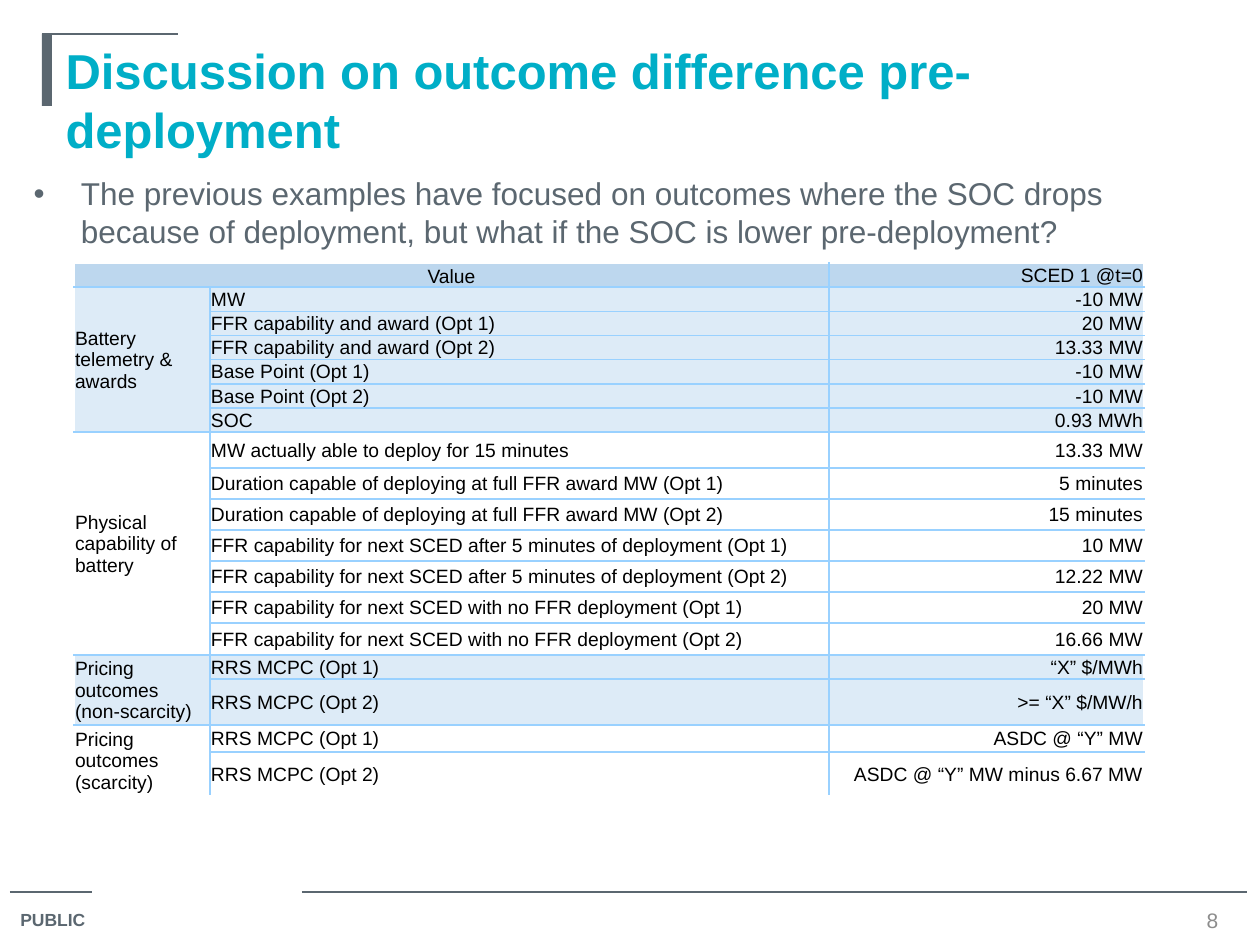
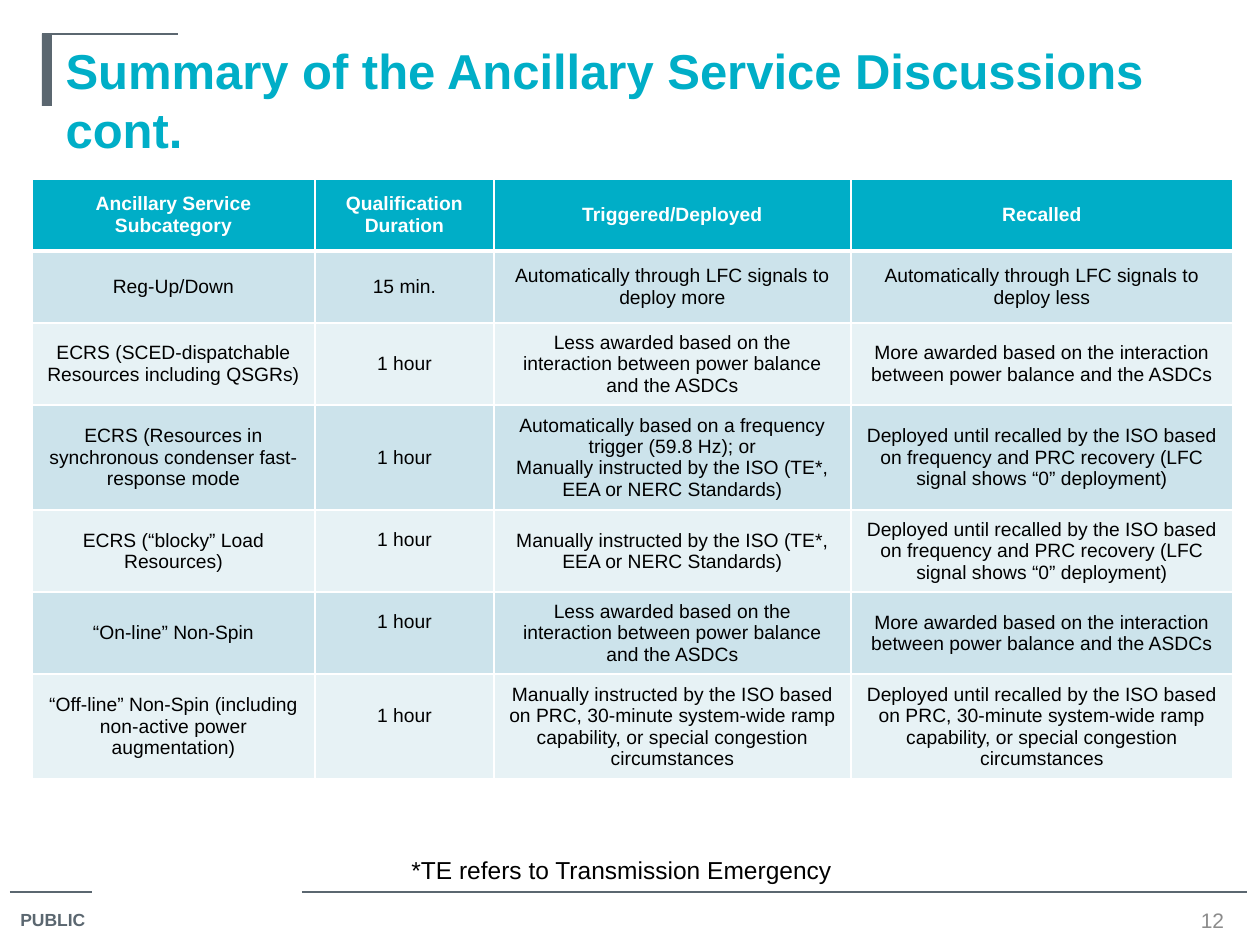
from lxml import etree
from pptx import Presentation
from pptx.dml.color import RGBColor
from pptx.enum.shapes import MSO_CONNECTOR, MSO_SHAPE
from pptx.enum.text import MSO_ANCHOR, MSO_AUTO_SIZE, PP_ALIGN
from pptx.oxml.ns import qn
from pptx.util import Pt

LEFT, CENTER, RIGHT = PP_ALIGN.LEFT, PP_ALIGN.CENTER, PP_ALIGN.RIGHT
TOP, MIDDLE, BOTTOM = MSO_ANCHOR.TOP, MSO_ANCHOR.MIDDLE, MSO_ANCHOR.BOTTOM
NO_AUTOSIZE = MSO_AUTO_SIZE.NONE
STRAIGHT, RECTANGLE = MSO_CONNECTOR.STRAIGHT, MSO_SHAPE.RECTANGLE

FONT = "Arial"
TEAL = RGBColor(0x00, 0xAE, 0xC7)
SLATE = RGBColor(0x5B, 0x67, 0x70)
GRAY = RGBColor(0x8C, 0x8C, 0x8C)
BLACK = RGBColor(0x00, 0x00, 0x00)
WHITE = RGBColor(0xFF, 0xFF, 0xFF)
SKY_LINE = RGBColor(0x99, 0xD1, 0xFF)
SKY_HEADER = RGBColor(0xBD, 0xD7, 0xEE)
SKY_BAND = RGBColor(0xDD, 0xEB, 0xF7)
TEAL_BANDS = (RGBColor(0xCC, 0xE3, 0xEB), RGBColor(0xE7, 0xF2, 0xF5))

PAGE_WIDTH, PAGE_HEIGHT = 1260, 945
TITLE_BOX = (53, 34, 1166, 72)
BODY_BOX = (21, 168, 1176, 581)
BATTERY_BOX = (74, 263, 1070, 513)
SERVICE_BOX = (32, 179, 1201, 504)
NOTE_BOX = (399, 849, 536, 43)

# Each group: label, shaded, row heights, (measure, value) rows
BATTERY_GROUPS = [
    ("Battery telemetry & awards", True, [23, 23, 22, 23, 23, 22], [
        ("MW", "-10 MW"),
        ("FFR capability and award (Opt 1)", "20 MW"),
        ("FFR capability and award (Opt 2)", "13.33 MW"),
        ("Base Point (Opt 1)", "-10 MW"),
        ("Base Point (Opt 2)", "-10 MW"),
        ("SOC", "0.93 MWh")]),
    ("Physical capability of battery", False, [36] + [31] * 5 + [32], [
        ("MW actually able to deploy for 15 minutes", "13.33 MW"),
        ("Duration capable of deploying at full FFR award MW (Opt 1)", "5 minutes"),
        ("Duration capable of deploying at full FFR award MW (Opt 2)", "15 minutes"),
        ("FFR capability for next SCED after 5 minutes of deployment (Opt 1)", "10 MW"),
        ("FFR capability for next SCED after 5 minutes of deployment (Opt 2)", "12.22 MW"),
        ("FFR capability for next SCED with no FFR deployment (Opt 1)", "20 MW"),
        ("FFR capability for next SCED with no FFR deployment (Opt 2)", "16.66 MW")]),
    ("Pricing outcomes (non-scarcity)", True, [23, 43], [
        ("RRS MCPC (Opt 1)", "“X” $/MWh"),
        ("RRS MCPC (Opt 2)", ">= “X” $/MW/h")]),
    ("Pricing outcomes (scarcity)", False, [27, 39], [
        ("RRS MCPC (Opt 1)", "ASDC @ “Y” MW"),
        ("RRS MCPC (Opt 2)", "ASDC @ “Y” MW minus 6.67 MW")]),
]

LESS_AWARDED, MORE_AWARDED = (
    f"{amount} awarded based on the interaction between power balance and the ASDCs"
    for amount in ("Less", "More"))
MANUAL = "Manually instructed by the ISO (TE*, EEA or NERC Standards)"
UNTIL_RECALLED = ("Deployed until recalled by the ISO based on frequency and PRC recovery "
                  "(LFC signal shows “0” deployment)")
CONGESTION = ("by the ISO based on PRC, 30-minute system-wide ramp capability, "
              "or special congestion circumstances")
SERVICE_ROWS = [
    ("Ancillary Service Subcategory", "Qualification Duration",
     "Triggered/Deployed", "Recalled"),
    ("Reg-Up/Down", "15 min.",
     "Automatically through LFC signals to deploy more",
     "Automatically through LFC signals to deploy less"),
    ("ECRS (SCED-dispatchable Resources including QSGRs)", "1 hour",
     LESS_AWARDED, MORE_AWARDED),
    ("ECRS (Resources in synchronous condenser fast-response mode", "1 hour",
     f"Automatically based on a frequency trigger (59.8 Hz); or\n{MANUAL}", UNTIL_RECALLED),
    ("ECRS (“blocky” Load Resources)", "1 hour", MANUAL, UNTIL_RECALLED),
    ("“On-line” Non-Spin", "1 hour", LESS_AWARDED, MORE_AWARDED),
    ("“Off-line” Non-Spin (including non-active power augmentation)", "1 hour",
     f"Manually instructed {CONGESTION}", f"Deployed until recalled {CONGESTION}"),
]


def px(length):
    return round(length * 914400 / 126)


def place(shape, box):
    shape.left, shape.top, shape.width, shape.height = map(px, box)


def write(frame, text, size, color, bold=False, align=LEFT):
    frame.text = text
    for paragraph in frame.paragraphs:
        paragraph.alignment = align
        paragraph.space_before = Pt(0)
        font = paragraph.font
        font.name, font.size, font.bold = FONT, Pt(size), bold
        font.color.rgb = color


def add_text(page, box, text, size, color, bold=False, align=LEFT, anchor=TOP):
    frame = page.shapes.add_textbox(*map(px, box)).text_frame
    frame.word_wrap = True
    frame.vertical_anchor = anchor
    write(frame, text, size, color, bold, align)


def add_rule(page, left, top, right):
    rule = page.shapes.add_connector(STRAIGHT, px(left), px(top), px(right), px(top))
    rule.line.color.rgb = SLATE
    rule.line.width = Pt(0.75)
    etree.SubElement(rule.element.spPr, qn("a:effectLst"))


def add_footer(page, number, top=892):
    add_rule(page, 10, top, 92)
    add_rule(page, 302, top, 1247)
    add_text(page, (8, top + 11, 97, 35), "PUBLIC", 10, SLATE, bold=True)
    add_text(page, (1176, top + 13, 73, 30), str(number), 12, GRAY,
             align=CENTER, anchor=MIDDLE)


def add_title(page, text, box):
    left, top, _, height = box
    # Corner accent
    bar = page.shapes.add_shape(RECTANGLE, *map(px, (left - 11, top, 10, height)))
    bar.shadow.inherit = False
    bar.fill.solid()
    bar.fill.fore_color.rgb = SLATE
    bar.line.fill.background()
    add_rule(page, left - 11, top, left + 125)
    # Heading
    title = page.shapes.title
    place(title, box)
    frame = title.text_frame
    frame.auto_size = NO_AUTOSIZE
    frame.vertical_anchor = TOP
    write(frame, text, 28, TEAL, bold=True)


def add_bullet(page, text, box):
    body = page.placeholders[1]
    place(body, box)
    frame = body.text_frame
    frame.auto_size = NO_AUTOSIZE
    frame.text = text
    properties = frame.paragraphs[0]._p.get_or_add_pPr()
    properties.set("marL", str(px(48)))
    properties.set("indent", str(px(-48)))
    etree.SubElement(properties, qn("a:buChar"), char="•")
    write(frame, text, 18, SLATE)


def set_border(cell, side, color, width):
    line = etree.SubElement(cell._tc.get_or_add_tcPr(), qn(f"a:ln{side}"), w=str(Pt(width)))
    fill = etree.SubElement(line, qn("a:solidFill"))
    etree.SubElement(fill, qn("a:srgbClr"), val=str(color))


def fill_cell(cell, color):
    if color is None:
        cell.fill.background()
    else:
        cell.fill.solid()
        cell.fill.fore_color.rgb = color


def add_grid(page, box, widths, heights):
    table = page.shapes.add_table(len(heights), len(widths), *map(px, box)).table
    for column, width in zip(table.columns, widths):
        column.width = px(width)
    for row, height in zip(table.rows, heights):
        row.height = px(height)
    return table


def add_battery_table(page, box):
    # Flatten the groups below one header row
    rows = [("Value", "", "SCED 1 @t=0")]
    heights, fills, merges = [22], [SKY_HEADER], []
    for label, shaded, group_heights, measures in BATTERY_GROUPS:
        first = len(rows)
        rows += [(label if index == 0 else "", *measure)
                 for index, measure in enumerate(measures)]
        heights += group_heights
        fills += [SKY_BAND if shaded else None] * len(measures)
        merges.append((first, len(rows) - 1))

    table = add_grid(page, box, (136, 619, 315), heights)
    table.first_row = table.horz_banding = False
    table.cell(0, 0).merge(table.cell(0, 1))
    for first, last in merges:
        table.cell(first, 0).merge(table.cell(last, 0))

    for r, (texts, fill) in enumerate(zip(rows, fills)):
        for c, text in enumerate(texts):
            cell = table.cell(r, c)
            if cell.is_spanned:
                continue
            # Inner rules only
            end_row, end_column = r + cell.span_height, c + cell.span_width
            inner = {"L": c > 0, "R": end_column < len(texts),
                     "T": r > 0, "B": end_row < len(rows)}
            for side, visible in inner.items():
                if visible:
                    set_border(cell, side, SKY_LINE, 1)
            fill_cell(cell, fill)
            cell.margin_left = cell.margin_right = cell.margin_top = px(1)
            cell.margin_bottom = 0
            header = r == c == 0
            cell.vertical_anchor = BOTTOM if header else MIDDLE
            align = CENTER if header else RIGHT if c == 2 else LEFT
            write(cell.text_frame, text, 11, BLACK, align=align)


def add_service_table(page, box):
    table = add_grid(page, box, (283, 179, 357, 382), [72] * len(SERVICE_ROWS))
    for r, texts in enumerate(SERVICE_ROWS):
        header = r == 0
        for c, text in enumerate(texts):
            cell = table.cell(r, c)
            for side in "LRTB":
                below_header = (header and side == "B") or (r == 1 and side == "T")
                set_border(cell, side, WHITE, 3 if below_header else 1)
            fill_cell(cell, TEAL if header else TEAL_BANDS[(r - 1) % 2])
            cell.vertical_anchor = MIDDLE
            # Durations in the last three rows sit half a line higher
            if c == 1 and r >= 4:
                cell.margin_bottom = px(28)
            write(cell.text_frame, text, 11, WHITE if header else BLACK, header, CENTER)


def add_page(deck, layout, title, number):
    page = deck.slides.add_slide(deck.slide_layouts[layout])
    add_footer(page, number)
    add_title(page, title, TITLE_BOX)
    return page


def main():
    deck = Presentation()
    deck.slide_width, deck.slide_height = px(PAGE_WIDTH), px(PAGE_HEIGHT)

    page = add_page(deck, 1, "Discussion on outcome difference pre-deployment", 8)
    add_bullet(page, "The previous examples have focused on outcomes where the SOC drops "
               "because of deployment, but what if the SOC is lower pre-deployment?", BODY_BOX)
    add_battery_table(page, BATTERY_BOX)

    page = add_page(deck, 5, "Summary of the Ancillary Service Discussions cont.", 12)
    add_service_table(page, SERVICE_BOX)
    add_text(page, NOTE_BOX, "*TE refers to Transmission Emergency", 14, BLACK)

    deck.save("out.pptx")


if __name__ == "__main__":
    main()
